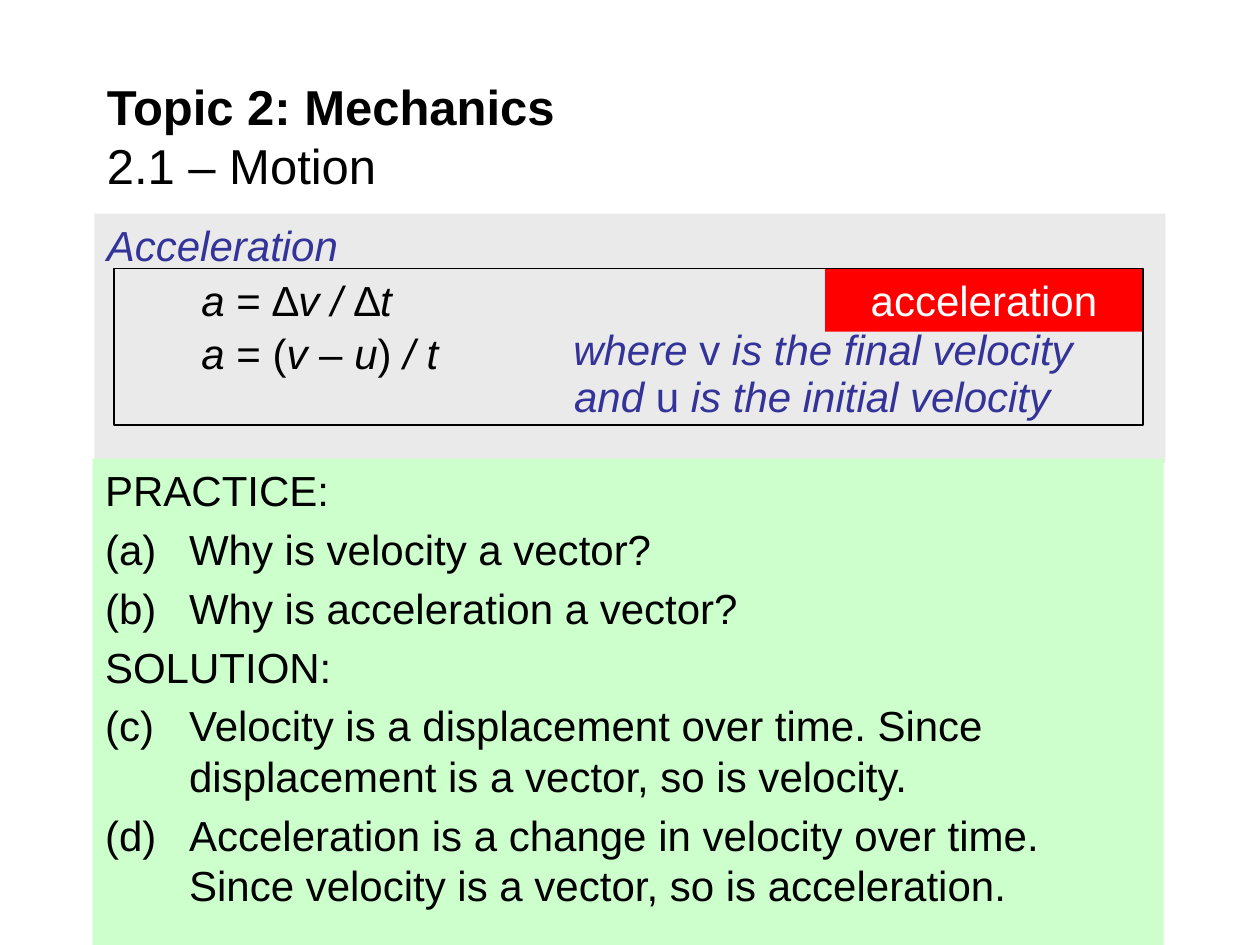
from lxml import etree
from pptx import Presentation
from pptx.dml.color import RGBColor
from pptx.enum.shapes import MSO_SHAPE
from pptx.enum.text import MSO_ANCHOR, PP_ALIGN
from pptx.oxml.ns import qn
from pptx.util import Pt

RECTANGLE = MSO_SHAPE.RECTANGLE
TOP, MIDDLE = MSO_ANCHOR.TOP, MSO_ANCHOR.MIDDLE
LEFT, CENTER = PP_ALIGN.LEFT, PP_ALIGN.CENTER

BLACK, WHITE, RED = "000000", "FFFFFF", "FF0000"
BLUE, GRAY, GREEN = "333399", "EAEAEA", "CCFFCC"


def color(hex_string):
    return RGBColor.from_string(hex_string)


class SlideBuilder:
    font_name = "Arial"
    body_size = 24
    title_size = 28
    item_indent = 48
    item_gap = 4.8

    def __init__(self, slide):
        self.slide = slide

    def box(self, left, top, width, height, fill=None, line=None):
        shape = self.slide.shapes.add_shape(
            RECTANGLE, Pt(left), Pt(top), Pt(width), Pt(height))
        shape.shadow.inherit = False
        if fill:
            shape.fill.solid()
            shape.fill.fore_color.rgb = color(fill)
        else:
            shape.fill.background()
        if line:
            shape.line.color.rgb = color(line)
            shape.line.width = Pt(1)
        else:
            shape.line.fill.background()
        return shape

    def text_box(self, left, top, width, height):
        return self.slide.shapes.add_textbox(
            Pt(left), Pt(top), Pt(width), Pt(height))

    def add_text(self, shape, lines, text_color=BLACK, size=body_size,
                 align=LEFT, anchor=TOP):
        """Fill the shape with lines; text between asterisks is italic."""
        frame = shape.text_frame
        frame.word_wrap = True
        frame.vertical_anchor = anchor
        for index, line in enumerate(lines):
            paragraph = frame.add_paragraph() if index else frame.paragraphs[0]
            paragraph.alignment = align
            paragraph.font.name = self.font_name
            paragraph.font.size = Pt(size)
            paragraph.font.color.rgb = color(text_color)
            for part, text in enumerate(line.split("*")):
                if text:
                    run = paragraph.add_run()
                    run.text = text
                    run.font.italic = part % 2 == 1
        return frame.paragraphs

    def number(self, paragraph, start):
        """Give the paragraph a hanging (a), (b), ... number."""
        properties = paragraph._p.get_or_add_pPr()
        properties.set("marL", str(Pt(self.item_indent)))
        properties.set("indent", str(-Pt(self.item_indent)))
        numbering = etree.Element(qn("a:buAutoNum"), type="alphaLcParenBoth")
        if start > 1:
            numbering.set("startAt", str(start))
        properties.find(qn("a:defRPr")).addprevious(numbering)

    def exercise(self, shape, sections):
        """Add headed lists whose numbering runs on between sections."""
        lines = [line for heading, items in sections for line in (heading, *items)]
        paragraphs = iter(self.add_text(shape, lines))
        start = 1
        for _, items in sections:
            next(paragraphs).space_before = Pt(self.item_gap)
            for _ in items:
                paragraph = next(paragraphs)
                paragraph.space_before = Pt(self.item_gap)
                self.number(paragraph, start)
            start += len(items)


def main():
    presentation = Presentation()
    presentation.slide_width, presentation.slide_height = Pt(720), Pt(540)
    builder = SlideBuilder(
        presentation.slides.add_slide(presentation.slide_layouts[6]))

    topic_panel = builder.box(54, 122, 612, 142.5, fill=GRAY)
    builder.add_text(topic_panel, ["*Acceleration*"], BLUE)

    title = builder.text_box(54, 42, 612, 70.5)
    heading, _ = builder.add_text(title, ["Topic 2: Mechanics", "2.1 – Motion"],
                                  size=builder.title_size, anchor=MIDDLE)
    heading.runs[0].font.bold = True

    practice_panel = builder.box(53, 262, 612, 278, fill=GREEN)
    builder.exercise(practice_panel, [
        ("PRACTICE:", [
            "Why is velocity a vector?",
            "Why is acceleration a vector?"]),
        ("SOLUTION:", [
            "Velocity is a displacement over time. Since displacement "
            "is a vector, so is velocity.",
            "Acceleration is a change in velocity over time. Since velocity "
            "is a vector, so is acceleration."]),
    ])

    label = builder.box(471.5, 153.5, 181.5, 36, fill=RED)
    builder.add_text(label, ["acceleration"], WHITE, align=CENTER)
    builder.box(65.25, 153.5, 587.75, 89.5, line=BLACK)

    for left, top, width, text, text_color in [
        (108, 153.5, 171, "*a* = ∆*v / *∆*t*", BLACK),
        (108, 183.5, 209, "*a* = (*v* – *u*)* / t*", BLACK),
        (320.5, 181.5, 335.5, "*where* v* is the final velocity*", BLUE),
        (321, 208, 335.5, "*and* u* is the initial velocity*", BLUE),
    ]:
        builder.add_text(builder.text_box(left, top, width, 36), [text], text_color)

    presentation.save("out.pptx")


if __name__ == "__main__":
    main()
